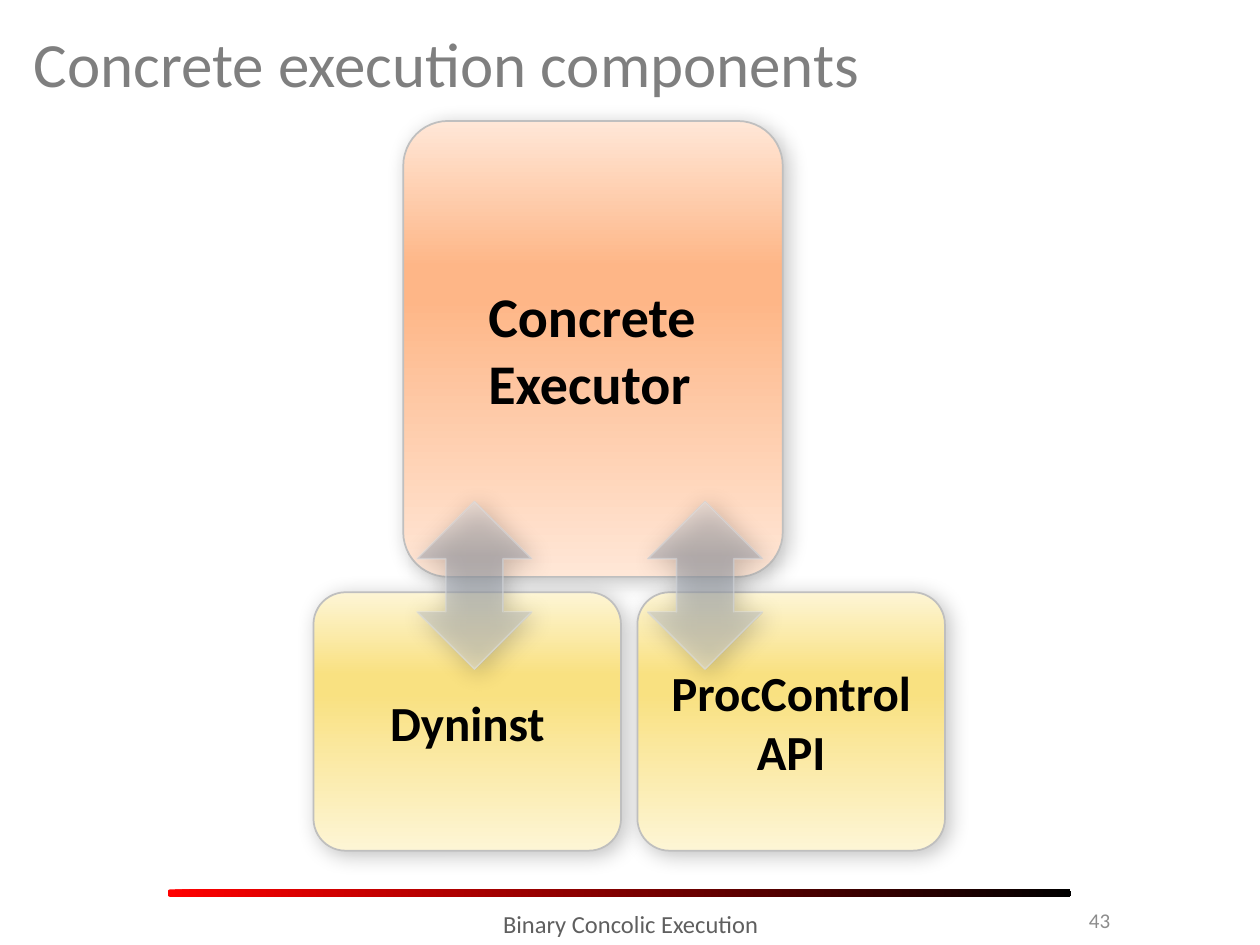
from dataclasses import dataclass

from lxml.etree import SubElement
from pptx import Presentation
from pptx.dml.color import RGBColor
from pptx.enum.shapes import MSO_SHAPE as Shape
from pptx.enum.text import MSO_ANCHOR as Anchor, PP_ALIGN as Align
from pptx.oxml.ns import qn
from pptx.util import Cm, Pt

FONT = "Calibri"
COLORS = {
    "red": "FF0000", "black": "000000", "title": "7F7F7F", "number": "8C8C8C",
    "footer": "5F5F5F", "border": "BFBFBF", "orange": "FEB687",
    "orange_pale": "FFE7D7", "yellow": "F9E181", "yellow_pale": "FDF5D5",
    "grey": "969EAB", "grey_pale": "DCDFE3",
}


@dataclass
class Label:
    text: str
    left: float
    top: float
    width: float
    height: float
    size: int
    color: str
    align: Align = Align.LEFT
    anchor: Anchor = Anchor.MIDDLE


@dataclass
class Component:
    text: str
    left: float
    top: float
    width: float
    height: float
    adj: float
    hue: str
    size: int
    align: Align
    inset_left: float = 0
    inset_right: float = 0


LABELS = [
    Label("Concrete execution components", 0.43, 0.2, 24.56, 2.11, 36, "title"),
    Label("43", 19.25, 18.03, 3.38, 1.02, 12, "number", Align.RIGHT),
    Label("Binary Concolic Execution", 6.15, 18.21, 13.13, 0.84, 14, "footer",
          Align.CENTER, Anchor.TOP),
]
LIBRARY_LEFT, LIBRARY_PITCH = 6.32, 6.53
LIBRARIES = ["Dyninst", "ProcControl\vAPI"]
COMPONENTS = [
    Component("Concrete Executor", 8.13, 2.44, 7.65, 9.19, 0.118, "orange", 32,
              Align.LEFT, 1.45, 0.25),
] + [
    Component(name, LIBRARY_LEFT + i * LIBRARY_PITCH, 11.94, 6.2, 5.21, 0.124,
              "yellow", 28, Align.CENTER)
    for i, name in enumerate(LIBRARIES)
]
ARROW_LEFTS = [8.41, 13.06]


def rgb(name: str) -> RGBColor:
    return RGBColor.from_string(COLORS[name])


def add_color(parent, name: str, alpha: int = 100) -> None:
    clr = SubElement(parent, qn("a:srgbClr"), val=COLORS[name])
    if alpha < 100:
        SubElement(clr, qn("a:alpha"), val=str(alpha * 1000))


def set_gradient(sp, stops: list, angle: int, alpha: int = 100) -> None:
    """Fill with (percent, colour) stops; angle is counter-clockwise."""
    sp.fill.gradient()
    sp.fill.gradient_angle = angle
    gs_list = sp._element.spPr.find(qn("a:gradFill")).find(qn("a:gsLst"))
    for gs in list(gs_list):
        gs_list.remove(gs)
    for percent, color in stops:
        gs = SubElement(gs_list, qn("a:gs"), pos=str(percent * 1000))
        add_color(gs, color, alpha)


def set_band(sp, hue: str, end: int, alpha: int = 100) -> None:
    """Fill top to bottom: pale, a full-strength band, pale."""
    pale = f"{hue}_pale"
    set_gradient(sp, [(0, pale), (32, hue), (end, hue), (100, pale)], 270, alpha)


def set_line(sp, color: str, alpha: int = 100) -> None:
    sp.line.width = Pt(1)
    sp.line.color.rgb = rgb(color)
    if alpha < 100:
        clr = next(sp.line._ln.iter(qn("a:srgbClr")))
        SubElement(clr, qn("a:alpha"), val=str(alpha * 1000))


def set_shadow(sp, alpha: int, blur: int) -> None:
    sp.shadow.inherit = False
    effects = sp._element.spPr.find(qn("a:effectLst"))
    shadow = SubElement(effects, qn("a:outerShdw"), blurRad=str(Pt(blur)),
                        dist=str(Pt(3)), dir="2700000", algn="tl", rotWithShape="0")
    add_color(shadow, "black", alpha)


def write(tf, text: str, size: int, color: str, align: Align, anchor: Anchor,
          bold: bool = False) -> None:
    tf.word_wrap = True
    tf.vertical_anchor = anchor
    p = tf.paragraphs[0]
    p.text = text
    p.alignment = align
    for r in p.runs:
        r.font.name = FONT
        r.font.size = Pt(size)
        r.font.bold = bold
        r.font.color.rgb = rgb(color)


def add_shape(s, kind: Shape, left: float, top: float, width: float, height: float):
    return s.shapes.add_shape(kind, Cm(left), Cm(top), Cm(width), Cm(height))


def add_label(s, item: Label) -> None:
    box = s.shapes.add_textbox(Cm(item.left), Cm(item.top), Cm(item.width), Cm(item.height))
    write(box.text_frame, item.text, item.size, item.color, item.align, item.anchor)


def add_footer_bar(s) -> None:
    sp = add_shape(s, Shape.ROUNDED_RECTANGLE, 3.38, 17.93, 18.21, 0.15)
    sp.adjustments[0] = 0.33
    sp.shadow.inherit = False
    sp.line.fill.background()
    set_gradient(sp, [(0, "red"), (100, "black")], 0)


def add_component(s, item: Component) -> None:
    sp = add_shape(s, Shape.ROUNDED_RECTANGLE, item.left, item.top, item.width, item.height)
    sp.adjustments[0] = item.adj
    set_band(sp, item.hue, 39)
    set_line(sp, "border")
    set_shadow(sp, 23, 12)
    tf = sp.text_frame
    tf.margin_left, tf.margin_right = Cm(item.inset_left), Cm(item.inset_right)
    write(tf, item.text, item.size, "black", item.align, Anchor.MIDDLE, bold=True)


def add_link_arrow(s, left: float) -> None:
    sp = add_shape(s, Shape.UP_DOWN_ARROW, left, 10.11, 2.31, 3.38)
    set_band(sp, "grey", 38, alpha=50)
    set_line(sp, "grey_pale", alpha=50)
    set_shadow(sp, 40, 14)


def main() -> None:
    prs = Presentation()
    prs.slide_width, prs.slide_height = Cm(25.4), Cm(19.05)
    s = prs.slides.add_slide(prs.slide_layouts[6])
    add_footer_bar(s)
    for label in LABELS:
        add_label(s, label)
    for component in COMPONENTS:
        add_component(s, component)
    for left in ARROW_LEFTS:
        add_link_arrow(s, left)
    prs.save("out.pptx")


if __name__ == "__main__":
    main()
